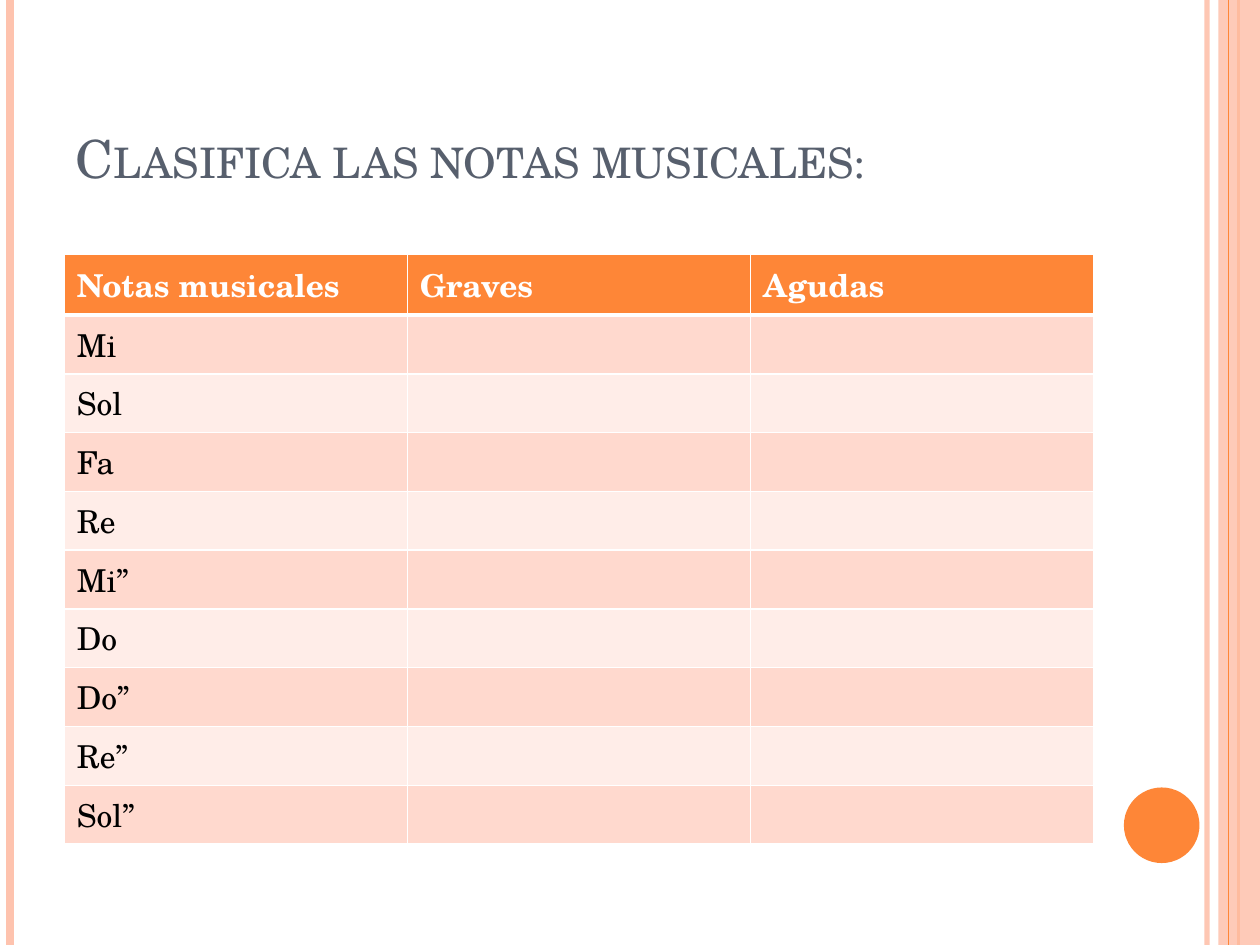
from dataclasses import dataclass

from lxml import etree
from pptx import Presentation
from pptx.dml.color import RGBColor
from pptx.enum.shapes import MSO_CONNECTOR, MSO_SHAPE
from pptx.enum.text import MSO_ANCHOR
from pptx.oxml.ns import qn
from pptx.util import Inches, Pt

LINE = MSO_CONNECTOR.STRAIGHT
RECT = MSO_SHAPE.RECTANGLE
OVAL = MSO_SHAPE.OVAL
BOTTOM = MSO_ANCHOR.BOTTOM


@dataclass(frozen=True)
class Theme:
    font: str = "TeX Gyre Schola"
    title: str = "575F6D"
    accent: str = "FE8637"
    pale: str = "FEC3AE"
    bands: tuple = ("FFD9CE", "FFEDE8")
    white: str = "FFFFFF"
    black: str = "000000"
    title_size: int = 30
    body_size: int = 18


THEME = Theme()
HEADS = ["Notas musicales", "Graves", "Agudas"]
NOTES = ["Mi", "Sol", "Fa", "Re", "Mi”", "Do", "Do”", "Re”", "Sol”"]
HEAD_ROW = 0.48


def set_alpha(fill, percent):
    color = fill.find(".//" + qn("a:srgbClr"))
    etree.SubElement(color, qn("a:alpha"), val=str(percent * 1000))


def add_rule(slide, x, top, height, color, width, alpha=None):
    rule = slide.shapes.add_connector(
        LINE, Inches(x), Inches(top), Inches(x), Inches(top + height))
    rule.line.color.rgb = RGBColor.from_string(color)
    rule.line.width = Pt(width)
    props = rule._element.spPr
    if alpha:
        set_alpha(props.find(qn("a:ln")), alpha)
    etree.SubElement(props, qn("a:effectLst"))


def add_block(slide, kind, box, color, alpha=None):
    block = slide.shapes.add_shape(kind, *map(Inches, box))
    block.shadow.inherit = False
    block.fill.solid()
    block.fill.fore_color.rgb = RGBColor.from_string(color)
    block.line.fill.background()
    if alpha:
        set_alpha(block._element.spPr.find(qn("a:solidFill")), alpha)


def style_font(font, size, color, bold=False):
    font.name = THEME.font
    font.size = Pt(size)
    font.bold = bold
    font.color.rgb = RGBColor.from_string(color)


def draw_frame(slide, box):
    """Stripes down both edges and the dot at lower right."""
    left, top, width, height = box
    right = left + width
    add_rule(slide, right - 0.42, top, height, THEME.pale, 3, 93)
    add_rule(slide, left + 0.08, top, height, THEME.pale, 4.5)
    add_rule(slide, right - 0.17, top, height, THEME.accent, 1.5)
    add_block(slide, RECT, (right - 0.33, top, 0.33, height), THEME.pale, 87)
    add_rule(slide, right - 0.25, top, height, THEME.accent, 0.75)
    add_block(slide, OVAL, (right - 1.08, top + height - 1.25, 0.6, 0.6),
              THEME.accent)


def draw_title(slide, box, text):
    frame = slide.shapes.add_textbox(*map(Inches, box)).text_frame
    frame.word_wrap = True
    frame.vertical_anchor = BOTTOM
    run = frame.paragraphs[0].add_run()
    run.text = text
    style_font(run.font, THEME.title_size, THEME.title)
    run._r.get_or_add_rPr().set("cap", "small")


def set_edges(cell, under):
    """White borders; they must come before the fill in the cell."""
    props = cell._tc.get_or_add_tcPr()
    for side, width in (("L", 1), ("R", 1), ("T", 1), ("B", under)):
        edge = etree.SubElement(props, qn("a:ln" + side), w=str(Pt(width)))
        fill = etree.SubElement(edge, qn("a:solidFill"))
        etree.SubElement(fill, qn("a:srgbClr"), val=THEME.white)


def draw_table(slide, box, heads, notes):
    rows = [heads] + [[note] + [""] * (len(heads) - 1) for note in notes]
    table = slide.shapes.add_table(
        len(rows), len(heads), *map(Inches, box)).table
    note_row = (box[3] - HEAD_ROW) / len(notes)
    for r, row in enumerate(rows):
        head = r == 0
        table.rows[r].height = Inches(HEAD_ROW if head else note_row)
        back = THEME.accent if head else THEME.bands[(r - 1) % 2]
        ink = THEME.white if head else THEME.black
        for c, text in enumerate(row):
            cell = table.cell(r, c)
            set_edges(cell, 3 if head else 1)
            cell.fill.solid()
            cell.fill.fore_color.rgb = RGBColor.from_string(back)
            para = cell.text_frame.paragraphs[0]
            if text:
                run = para.add_run()
                run.text = text
                style_font(run.font, THEME.body_size, ink, head)
            else:
                style_font(para.font, THEME.body_size, ink)


def main():
    deck = Presentation()
    deck.slide_width, deck.slide_height = Inches(10), Inches(7.5)
    slide = deck.slides.add_slide(deck.slide_layouts[6])
    draw_frame(slide, (0, 0, 10, 7.5))
    draw_title(slide, (0.5, 0.3, 8.17, 1.25), "Clasifica las notas musicales:")
    draw_table(slide, (0.51, 2.02, 8.17, 4.68), HEADS, NOTES)
    deck.save("out.pptx")


if __name__ == "__main__":
    main()
